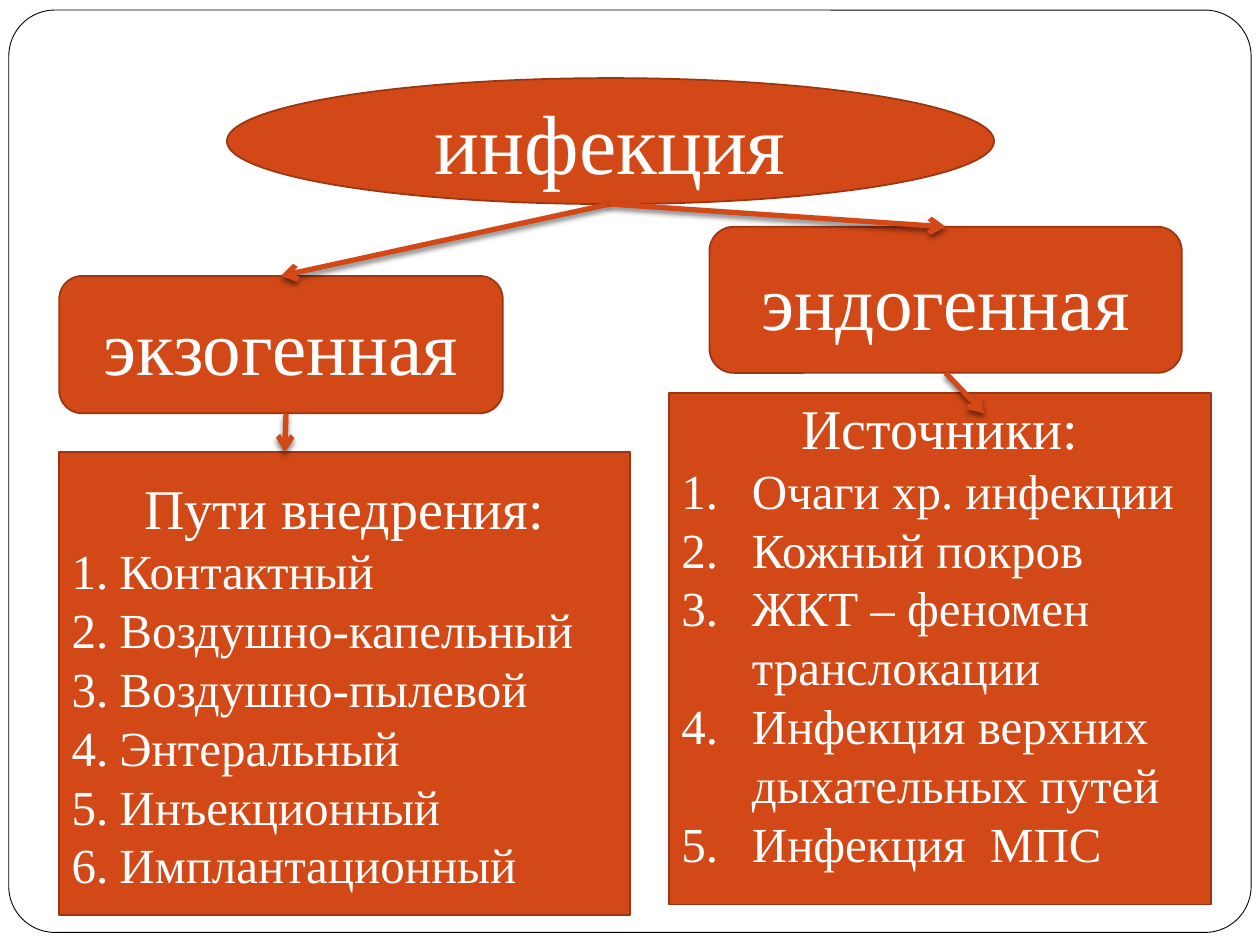
from dataclasses import dataclass

import pptx
import pptx.dml.color
import pptx.enum.shapes
import pptx.enum.text
import pptx.oxml
import pptx.oxml.ns
import pptx.util

Inches = pptx.util.Inches
Pt = pptx.util.Pt
Shape = pptx.enum.shapes.MSO_SHAPE
Align = pptx.enum.text.PP_ALIGN
Anchor = pptx.enum.text.MSO_ANCHOR


@dataclass(frozen=True)
class Theme:
    font: str = "Times New Roman"
    fill: str = "D34817"
    border: str = "9C3511"
    paper: str = "FFFFFF"
    ink: str = "000000"
    title_size: int = 48
    branch_size: int = 44
    heading_size: int = 32
    item_size: int = 28
    frame_width: float = 0.5
    border_width: float = 1
    arrow_width: float = 3


THEME = Theme()


def rgb(value):
    return pptx.dml.color.RGBColor.from_string(value)


def add_xml(parent, tag, content="", **attributes):
    listed = "".join(f' {key}="{value}"' for key, value in attributes.items())
    namespace = pptx.oxml.ns.nsdecls("a")
    parent.append(pptx.oxml.parse_xml(f"<a:{tag} {namespace}{listed}>{content}</a:{tag}>"))


def add_panel(slide, kind, box, fill=THEME.fill, border=THEME.border, width=THEME.border_width):
    panel = slide.shapes.add_shape(kind, *map(Inches, box))
    panel.shadow.inherit = False
    panel.fill.solid()
    panel.fill.fore_color.rgb = rgb(fill)
    panel.line.color.rgb = rgb(border)
    panel.line.width = Pt(width)
    panel.text_frame.word_wrap = True
    panel.text_frame.vertical_anchor = Anchor.MIDDLE
    return panel


def write(paragraph, text, size, align=Align.CENTER):
    paragraph.alignment = align
    run = paragraph.add_run()
    run.text = text
    run.font.name = THEME.font
    run.font.size = Pt(size)
    run.font.color.rgb = rgb(THEME.paper)


def add_frame(slide, box):
    frame = add_panel(slide, Shape.ROUNDED_RECTANGLE, box, THEME.paper, THEME.ink, THEME.frame_width)
    frame.adjustments[0] = 0.05


def add_node(slide, kind, box, text, size):
    node = add_panel(slide, kind, box)
    write(node.text_frame.paragraphs[0], text, size)
    return node


def add_list(slide, box, heading, items, indent):
    panel = add_panel(slide, Shape.RECTANGLE, box)
    write(panel.text_frame.paragraphs[0], heading, THEME.heading_size)
    for item in items:
        paragraph = panel.text_frame.add_paragraph()
        write(paragraph, item, THEME.item_size, Align.LEFT)
        properties = paragraph._p.get_or_add_pPr()
        properties.set("marL", str(Inches(indent)))
        properties.set("indent", str(-Inches(indent)))
        add_xml(properties, "buFont", typeface="+mj-lt")
        add_xml(properties, "buAutoNum", type="arabicPeriod")
    return panel


def add_arrow(slide, start, end, source=None, target=None):
    arrow = slide.shapes.add_connector(
        pptx.enum.shapes.MSO_CONNECTOR.STRAIGHT, *map(Inches, start + end)
    )
    if source is not None:
        arrow.begin_connect(source, 2)
    if target is not None:
        arrow.end_connect(target, 0)
    arrow.line.color.rgb = rgb(THEME.fill)
    arrow.line.width = Pt(THEME.arrow_width)
    add_xml(arrow.line._get_or_add_ln(), "tailEnd", type="arrow")
    shadow = (
        f'<a:outerShdw blurRad="{Pt(3)}" dist="{Pt(2)}" dir="5400000" rotWithShape="0">'
        f'<a:srgbClr val="{THEME.ink}"><a:alpha val="50000"/></a:srgbClr></a:outerShdw>'
    )
    add_xml(arrow._element.spPr, "effectLst", shadow)


def main():
    presentation = pptx.Presentation()
    presentation.slide_width = Inches(10)
    presentation.slide_height = Inches(7.5)
    slide = presentation.slides.add_slide(presentation.slide_layouts[6])

    add_frame(slide, (0.07, 0.08, 9.86, 7.32))
    add_node(slide, Shape.OVAL, (1.8, 0.62, 6.09, 1), "инфекция", THEME.title_size)
    exogenous = add_node(
        slide, Shape.ROUNDED_RECTANGLE, (0.47, 2.19, 3.52, 1.09), "экзогенная", THEME.branch_size
    )
    endogenous = add_node(
        slide, Shape.ROUNDED_RECTANGLE, (5.63, 1.8, 3.75, 1.16), "эндогенная", THEME.branch_size
    )
    add_list(
        slide,
        (0.47, 3.59, 4.53, 3.67),
        "Пути внедрения:",
        [
            "Контактный",
            "Воздушно-капельный",
            "Воздушно-пылевой",
            "Энтеральный",
            "Инъекционный",
            "Имплантационный",
        ],
        0.38,
    )
    sources = add_list(
        slide,
        (5.31, 3.12, 4.3, 4.06),
        "Источники:",
        [
            "Очаги хр. инфекции",
            "Кожный покров",
            "ЖКТ – феномен транслокации",
            "Инфекция верхних дыхательных путей",
            "Инфекция  МПС",
        ],
        0.56,
    )
    sources.text_frame.vertical_anchor = Anchor.TOP
    sources.text_frame.margin_top = 0

    infection_bottom = (4.84, 1.62)
    add_arrow(slide, infection_bottom, (2.23, 2.19), target=exogenous)
    add_arrow(slide, infection_bottom, (7.5, 1.8), target=endogenous)
    add_arrow(slide, (2.27, 3.28), (2.26, 3.59))
    add_arrow(slide, (7.5, 2.95), (7.81, 3.28), source=endogenous)

    presentation.save("out.pptx")


if __name__ == "__main__":
    main()
